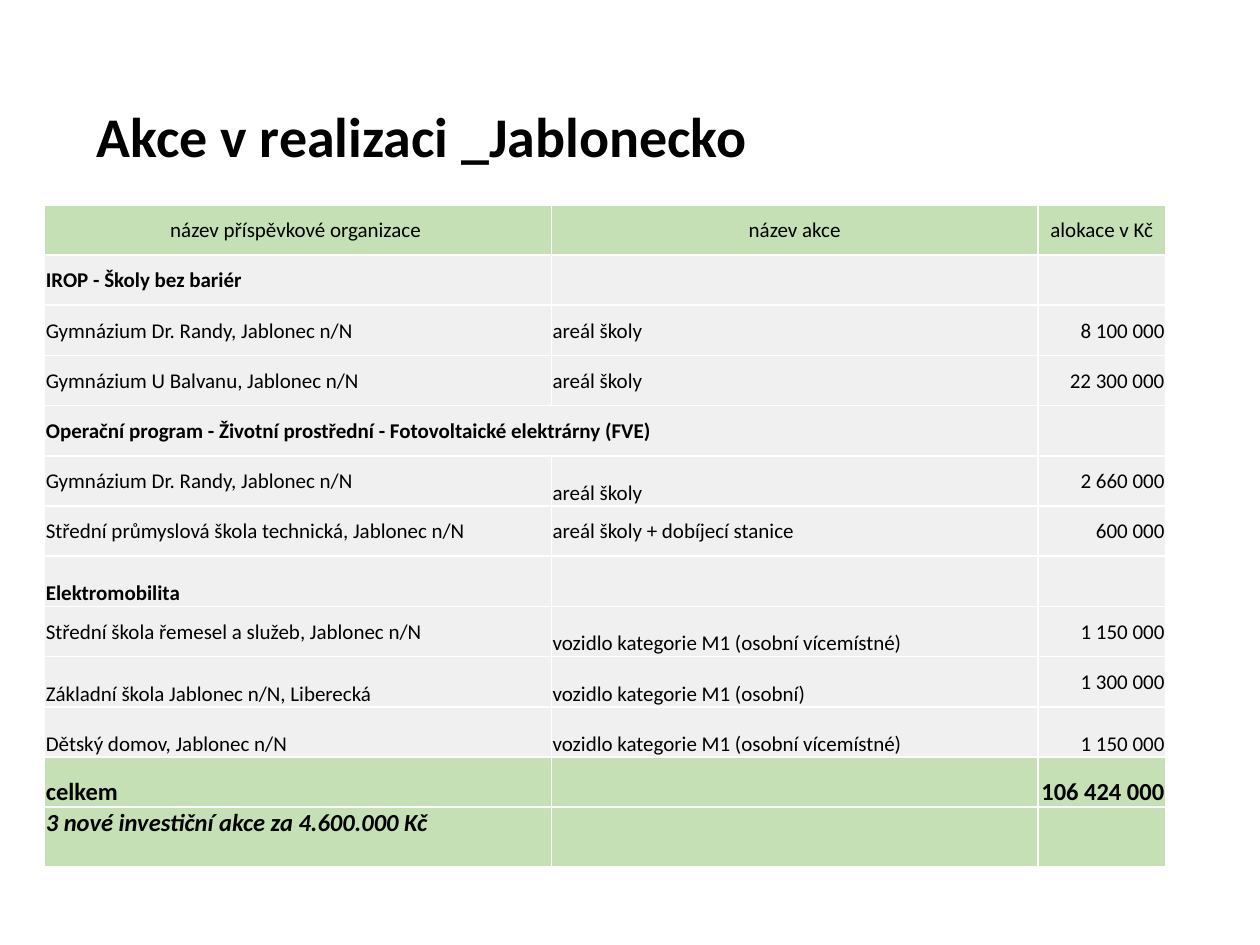
from lxml.etree import SubElement
from pptx import Presentation
from pptx.dml.color import RGBColor
from pptx.enum.text import MSO_ANCHOR as ANCHOR, PP_ALIGN as ALIGN
from pptx.oxml.ns import qn
from pptx.util import Pt

GREEN, GREY = "C5E0B4", "F0F0F0"
MID, LOW, TOP = ANCHOR.MIDDLE, ANCHOR.BOTTOM, ANCHOR.TOP

# Each row: cell texts, their vertical anchors, look
ROWS = [
    (("název příspěvkové organizace ", "název akce", "alokace v Kč"), (MID, MID, MID), "head"),
    (("IROP - Školy bez bariér", "", ""), (MID, MID, MID), "section"),
    (("Gymnázium Dr. Randy, Jablonec n/N", "areál školy", "8 100 000"), (MID, MID, MID), "item"),
    (("Gymnázium U Balvanu, Jablonec n/N", "areál školy", "22 300 000"), (MID, MID, MID), "item"),
    (("Operační program - Životní prostřední - Fotovoltaické elektrárny (FVE)", "", ""),
     (MID, MID, MID), "wide section"),
    (("Gymnázium Dr. Randy, Jablonec n/N", "areál školy", "2 660 000"), (MID, LOW, MID), "item"),
    (("Střední průmyslová škola technická, Jablonec n/N", "areál školy + dobíjecí stanice",
      "600 000"), (MID, MID, MID), "item"),
    (("Elektromobilita", "", ""), (LOW, MID, MID), "section"),
    (("Střední škola řemesel a služeb, Jablonec n/N",
      "vozidlo kategorie M1 (osobní vícemístné)", "1 150 000"), (MID, LOW, MID), "item"),
    (("Základní škola Jablonec n/N, Liberecká", "vozidlo kategorie M1 (osobní)",
      "1 300 000"), (LOW, LOW, MID), "item"),
    (("Dětský domov, Jablonec n/N", "vozidlo kategorie M1 (osobní vícemístné)",
      "1 150 000"), (LOW, LOW, LOW), "item"),
    (("celkem", "", "106 424 000"), (LOW, LOW, LOW), "total"),
    (("3 nové investiční akce za 4.600.000 Kč", "", ""), (TOP, LOW, LOW), "note"),
]

# Look: fill, text size, bold, italic
LOOKS = {
    "head": (GREEN, 12, False, False),
    "section": (GREY, 12, True, False),
    "wide section": (GREY, 12, True, False),
    "item": (GREY, 12, False, False),
    "total": (GREEN, 14, True, False),
    "note": (GREEN, 14, True, True),
}


def rgb(value):
    return RGBColor.from_string(value)


class Deck:
    font, ink, border = "Calibri", "000000", "FFFFFF"

    def __init__(self, width, height):
        self.prs = Presentation()
        self.prs.slide_width, self.prs.slide_height = Pt(width), Pt(height)
        self.s = self.prs.slides.add_slide(self.prs.slide_layouts[6])

    def set_text(self, tf, text, size, bold=False, italic=False, align=ALIGN.LEFT):
        tf.text = text
        p = tf.paragraphs[0]
        p.alignment = align
        for r in p.runs:
            f = r.font
            f.name, f.size, f.bold, f.italic = self.font, Pt(size), bold, italic
            f.color.rgb = rgb(self.ink)

    def title(self, text, x, y, w, h):
        tf = self.s.shapes.add_textbox(Pt(x), Pt(y), Pt(w), Pt(h)).text_frame
        tf.word_wrap = True
        self.set_text(tf, text, 32, bold=True)

    def outline(self, cell):
        """Give all four sides of a cell a 1 pt border."""
        tc_pr = cell._tc.get_or_add_tcPr()
        for side in "LRTB":
            ln = SubElement(tc_pr, qn(f"a:ln{side}"), w=str(Pt(1)))
            fill = SubElement(ln, qn("a:solidFill"))
            SubElement(fill, qn("a:srgbClr"), val=self.border)

    def table(self, rows, x, y, widths, heights):
        frame = self.s.shapes.add_table(len(rows), len(widths), Pt(x), Pt(y),
                                        Pt(sum(widths)), Pt(sum(heights)))
        table = frame.table
        for column, width in zip(table.columns, widths):
            column.width = Pt(width)
        for i, (texts, anchors, look) in enumerate(rows):
            table.rows[i].height = Pt(heights[i])
            fill, size, bold, italic = LOOKS[look]
            for j, (text, anchor) in enumerate(zip(texts, anchors)):
                cell = table.cell(i, j)
                self.outline(cell)
                cell.fill.solid()
                cell.fill.fore_color.rgb = rgb(fill)
                cell.margin_left = cell.margin_right = cell.margin_top = Pt(0.7)
                cell.margin_bottom = 0
                cell.vertical_anchor = anchor
                align = ALIGN.CENTER if look == "head" else ALIGN.RIGHT if j == 2 else ALIGN.LEFT
                self.set_text(cell.text_frame, text, size, bold, italic, align)
            if look == "wide section":
                table.cell(i, 0).merge(table.cell(i, 1))


def main():
    deck = Deck(720, 540)
    deck.title("Akce v realizaci _Jablonecko", 48.2, 54.7, 601.2, 46.1)
    heights = [28.7] * (len(ROWS) - 1) + [34.2]
    deck.table(ROWS, 25.5, 117, [289.6, 278, 73], heights)
    deck.prs.save("out.pptx")


if __name__ == "__main__":
    main()
